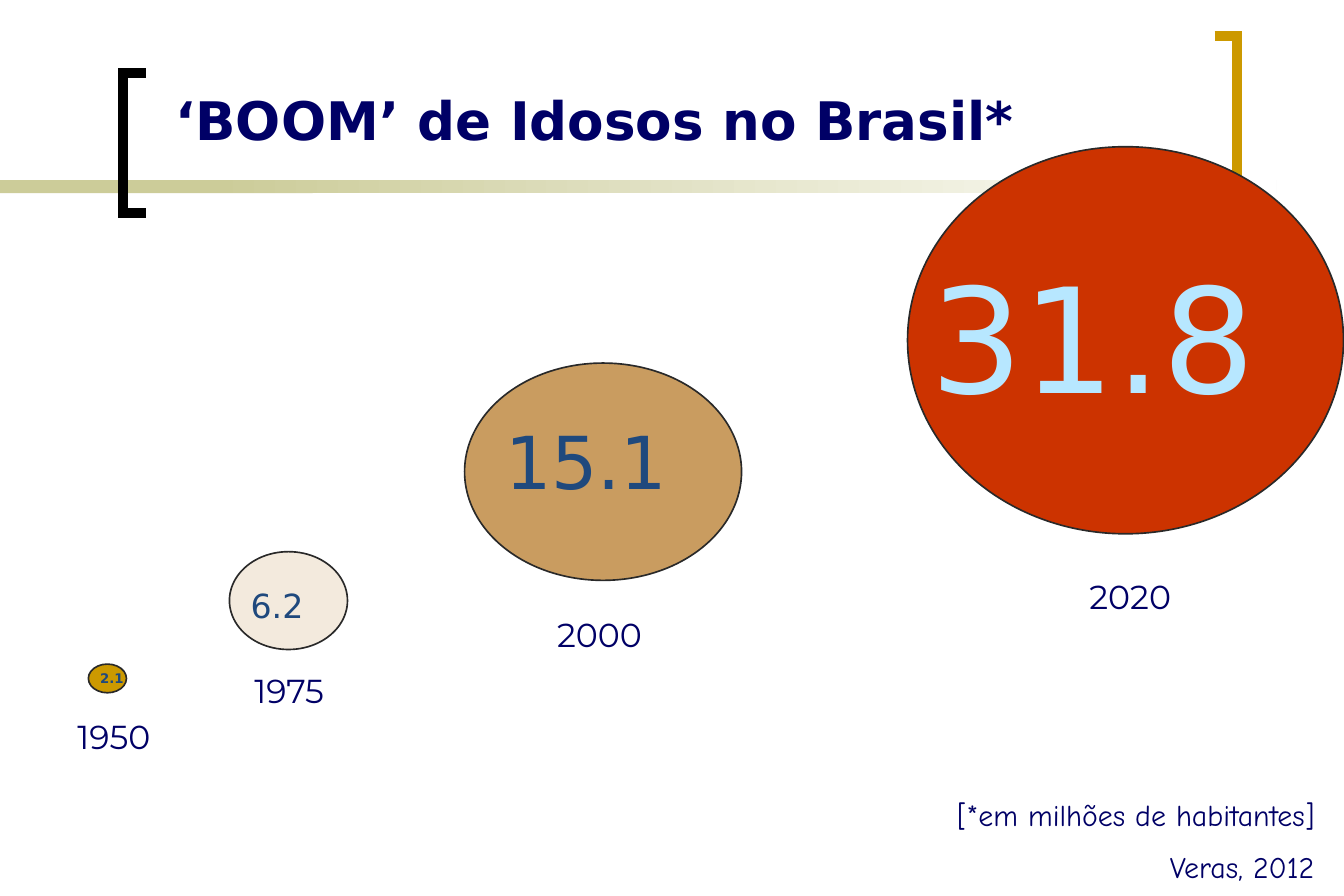
from lxml import etree
from pptx import Presentation
from pptx.dml.color import RGBColor
from pptx.enum.shapes import MSO_SHAPE as Shape
from pptx.enum.text import MSO_AUTO_SIZE as AutoSize, PP_ALIGN as Align
from pptx.oxml.ns import qn
from pptx.util import Cm, Pt

COLORS = {
    "navy": "000066", "blue": "1F497D", "sky": "B7E7FF", "outline": "292929",
    "gold": "CC9900", "cream": "F3EADD", "tan": "C99C60", "red": "CC3300",
    "olive": "CCCC99", "white": "FFFFFF", "black": "000000",
}


def color(name):
    return RGBColor.from_string(COLORS[name])


def add_text(place, lines, size, font, ink, align=Align.LEFT, bold=False, wrap=True):
    box = page.shapes.add_textbox(*map(Cm, place))
    frame = box.text_frame
    frame.word_wrap = wrap
    frame.auto_size = AutoSize.SHAPE_TO_FIT_TEXT
    frame.text = "\n".join(lines)
    for index, para in enumerate(frame.paragraphs):
        para.alignment = align
        if index:
            para.space_before = Pt(10)
        for span in para.runs:
            span.font.size = Pt(size)
            span.font.name = font
            span.font.bold = bold
            span.font.color.rgb = color(ink)


deck = Presentation()
deck.slide_width, deck.slide_height = Cm(28.58), Cm(19.05)
page = deck.slides.add_slide(deck.slide_layouts[6])

# Band under the title: a solid start, then a fade to white
for left, width, fades in [(0, 6.65, False), (4.52, 22.63, True)]:
    band = page.shapes.add_shape(Shape.RECTANGLE, Cm(left), Cm(3.83), Cm(width), Cm(0.28))
    band.shadow.inherit = False
    band.line.fill.background()
    if fades:
        band.fill.gradient()
        band.fill.gradient_angle = 0
        for stop, name in zip(band.fill.gradient_stops, ["olive", "white"]):
            stop.color.rgb = color(name)
    else:
        band.fill.solid()
        band.fill.fore_color.rgb = color("olive")

# Square brackets around the title
for tip, spine, top, name in [(3.1, 2.62, 1.55, "black"), (25.83, 26.3, 0.76, "gold")]:
    bottom = top + 2.97
    outline = page.shapes.build_freeform(Cm(tip), Cm(top))
    corners = [(spine, top), (spine, bottom), (tip, bottom)]
    outline.add_line_segments([(Cm(x), Cm(y)) for x, y in corners], close=False)
    bracket = outline.convert_to_shape()
    bracket.shadow.inherit = False
    bracket.fill.background()
    bracket.line.color.rgb = color(name)
    bracket.line.width = Pt(6)
    miter = etree.SubElement(bracket.line.fill._xPr, qn("a:miter"))
    miter.set("lim", "800000")

add_text((3.48, 1.73, 19.81, 1.63), ["‘BOOM’ de Idosos no Brasil*"],
         32, "DejaVu Sans", "navy", bold=True)

# Bubbles: year, year place, value, value place, size, ink, bubble place, fill
bubbles = [
    ("1950", (0.89, 15.11, 3.07, 1.12), "2.1", (1.88, 14.12, 1.02, 0.61), 8, "blue",
     (1.88, 14.12, 0.81, 0.61), "gold"),
    ("1975", (4.5, 14.12, 3.3, 1.12), "6.2", (5.08, 12.32, 1.9, 1.12), 20, "blue",
     (4.88, 11.73, 2.51, 2.08), "cream"),
    ("2000", (10.49, 12.93, 4.52, 1.12), "15.1", (10.49, 8.74, 4.88, 2.13), 44, "blue",
     (9.88, 7.72, 5.89, 4.62), "tan"),
    ("2020", (21.89, 12.12, 4.29, 1.12), "31.8", (19.53, 5.13, 9.04, 3.99), 88, "sky",
     (19.3, 3.12, 9.27, 8.23), "red"),
]
for year, year_place, value, value_place, size, ink, place, fill in bubbles:
    bubble = page.shapes.add_shape(Shape.OVAL, *map(Cm, place))
    bubble.shadow.inherit = False
    bubble.fill.solid()
    bubble.fill.fore_color.rgb = color(fill)
    bubble.line.color.rgb = color("outline")
    bubble.line.width = Pt(1)
    smallest = size == 8
    add_text(value_place, [value], size, "DejaVu Sans", ink, bold=smallest, wrap=not smallest)
    add_text(year_place, [year], 20, "Montserrat", "navy", Align.CENTER)

# Unit and source
add_text((17.48, 16.81, 10.72, 2.18), ["[*em milhões de habitantes]", "Veras, 2012"],
         18, "Comic Neue", "navy", Align.RIGHT)

deck.save("out.pptx")
